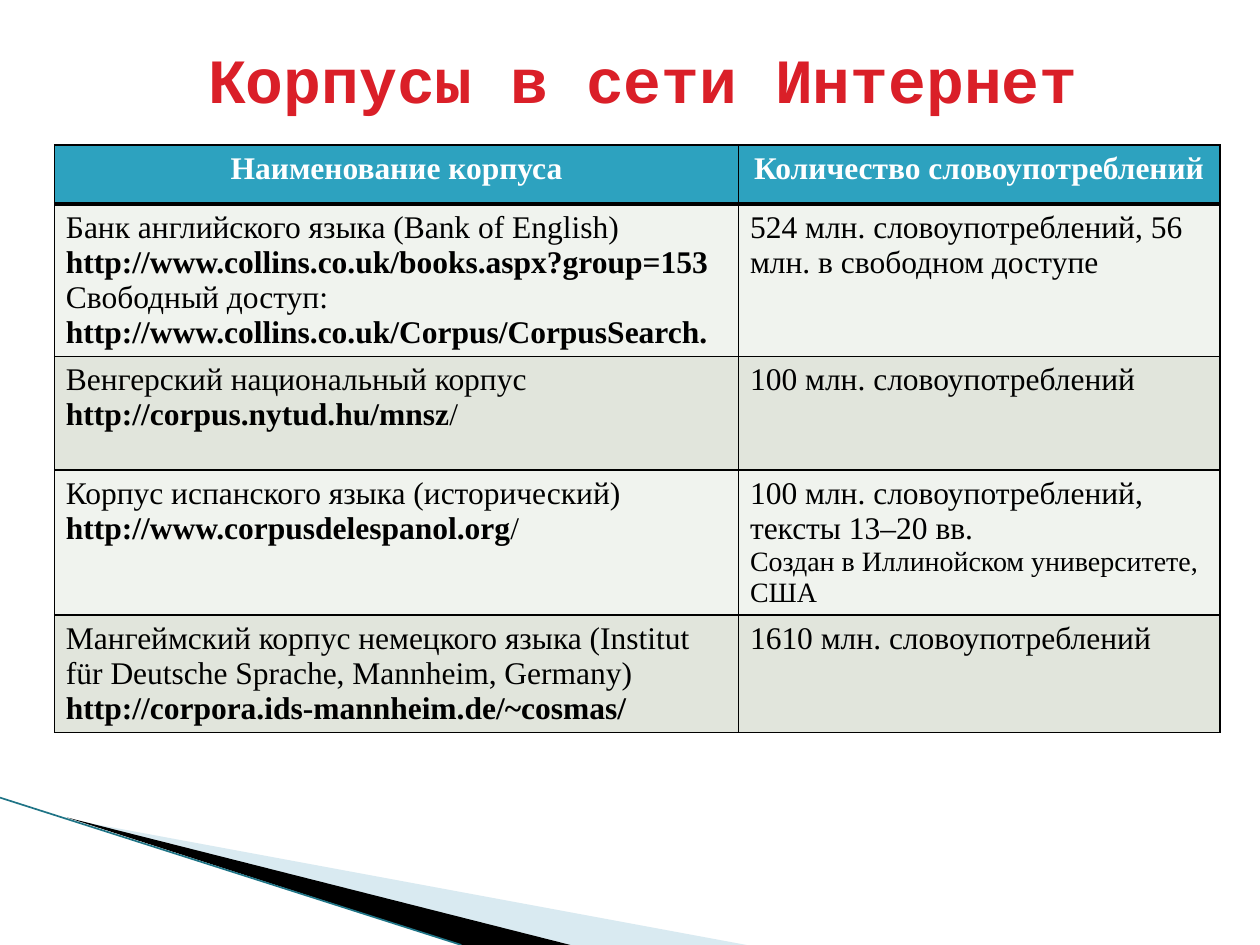
from lxml.etree import SubElement
from pptx import Presentation
from pptx.dml.color import RGBColor
from pptx.enum.text import MSO_ANCHOR, PP_ALIGN
from pptx.oxml import parse_xml
from pptx.oxml.ns import nsdecls, qn
from pptx.util import Cm, Pt

TITLE = "Корпусы в сети Интернет"
HEADERS = ["Наименование корпуса", "Количество словоупотреблений"]
BODY, LINK, NOTE = (18, False), (18, True), (16, False)
BREAK = ("\n", BODY)
CORPORA = [
    (
        [
            [("Банк английского языка (Bank of English) ", BODY),
             ("http://www.collins.co.uk/books.aspx?group=153", LINK)],
            [("Свободный доступ: ", BODY),
             ("http://www.collins.co.uk/Corpus/CorpusSearch.", LINK)],
        ],
        [[("524 млн. словоупотреблений, 56 млн. в свободном доступе", BODY)]],
    ),
    (
        [[("Венгерский национальный корпус", BODY), BREAK,
          ("http://corpus.nytud.hu/mnsz", LINK), ("/", BODY)]],
        [[("100 млн. словоупотреблений", BODY)]],
    ),
    (
        [[("Корпус испанского языка (исторический)", BODY), BREAK,
          ("http://www.corpusdelespanol.org", LINK), ("/", BODY)]],
        [[("100 млн. словоупотреблений, тексты 13–20 вв.", BODY), BREAK,
          ("Создан в Иллинойском университете, США", NOTE)]],
    ),
    (
        [[("Мангеймский корпус немецкого языка "
           "(Institut für Deutsche Sprache, Mannheim, Germany)", BODY), BREAK,
          ("http://corpora.ids-mannheim.de/~cosmas/", LINK)]],
        [[("1610 млн. словоупотреблений", BODY)]],
    ),
]
COLUMN_WIDTHS = [13.79, 9.7]
ROW_HEIGHTS = [1.19, 3.05, 2.29, 2.9, 2.36]
HEADER_FILL, BAND_FILLS = "2DA2BF", ["F0F3EE", "E1E5DC"]
WEDGES = [
    ([(1.4, 16.52), (15.05, 19.05), (11.5, 19.05)], "A0CBDC", 40),
    ([(1.35, 16.48), (11.5, 19.05), (9.3, 19.05)], "000000", 100),
]
EDGE = [(0, 16.08), (9.3, 19.05)]
EDGE_COLOR = "1F7486"
CELL_FORMAT = {"margin_left": Cm(0.23), "margin_right": Cm(0.23),
               "margin_top": Cm(0.13), "margin_bottom": Cm(0.13)}


def color(value):
    """Turn a hex string into a colour."""
    return RGBColor.from_string(value)


def apply_format(target, values):
    """Set every attribute named in a dict."""
    for name, value in values.items():
        setattr(target, name, value)


def add_run(paragraph, text, size, bold, ink="000000", face="Times New Roman"):
    """Append formatted text to a paragraph."""
    run = paragraph.add_run()
    run.text = text
    apply_format(run.font, {"size": Pt(size), "bold": bold, "name": face})
    run.font.color.rgb = color(ink)


def paint(shape, value):
    """Give a shape or cell a solid fill."""
    shape.fill.solid()
    shape.fill.fore_color.rgb = color(value)


def add_wedge(slide, points, value, opacity):
    """Draw a filled triangle of the corner decoration."""
    start, *others = [(Cm(x), Cm(y)) for x, y in points]
    builder = slide.shapes.build_freeform(*start)
    builder.add_line_segments(others)
    shape = builder.convert_to_shape()
    shape.shadow.inherit = False
    paint(shape, value)
    shape.line.fill.background()
    if opacity < 100:
        fill_color = shape.fill._xPr.find(qn("a:solidFill"))[0]
        SubElement(fill_color, qn("a:alpha"), val=str(opacity * 1000))


def add_edge(slide):
    """Draw the thin line along the corner decoration."""
    ends = [Cm(value) for point in EDGE for value in point]
    connector = slide.shapes.add_connector(1, *ends)
    connector.line.width = Pt(0.95)
    connector.line.color.rgb = color(EDGE_COLOR)
    SubElement(connector._element.spPr, qn("a:effectLst"))


def set_borders(cell, top, bottom):
    """Outline a cell in black with the given line widths."""
    properties = cell._tc.get_or_add_tcPr()
    widths = {"lnL": 1, "lnR": 1, "lnT": top, "lnB": bottom}
    for index, (side, width) in enumerate(widths.items()):
        properties.insert(index, parse_xml(
            f'<a:{side} {nsdecls("a")} w="{Pt(width)}"><a:solidFill>'
            f'<a:srgbClr val="000000"/></a:solidFill></a:{side}>'))


def fill_cell(cell, paragraphs, row, ink, alignment):
    """Write, paint and outline one cell."""
    apply_format(cell, CELL_FORMAT)
    for index, runs in enumerate(paragraphs):
        frame = cell.text_frame
        paragraph = frame.add_paragraph() if index else frame.paragraphs[0]
        paragraph.alignment = alignment
        for text, (size, bold) in runs:
            if text == "\n":
                paragraph.add_line_break()
            else:
                add_run(paragraph, text, size, bold, ink)
    paint(cell, BAND_FILLS[(row - 1) % 2] if row else HEADER_FILL)
    set_borders(cell, 3 if row == 1 else 1, 1 if row else 3)


def add_corpus_table(slide):
    """Build the table of corpora."""
    rows = [[[[(header, LINK)]] for header in HEADERS], *CORPORA]
    table = slide.shapes.add_table(
        len(rows), len(HEADERS), Cm(1.1), Cm(2.92),
        Cm(sum(COLUMN_WIDTHS)), Cm(sum(ROW_HEIGHTS))).table
    for column, width in zip(table.columns, COLUMN_WIDTHS):
        column.width = Cm(width)
    for index, (row, height) in enumerate(zip(rows, ROW_HEIGHTS)):
        table.rows[index].height = Cm(height)
        ink, alignment = ("000000", PP_ALIGN.LEFT) if index else ("FFFFFF", PP_ALIGN.CENTER)
        for column, paragraphs in enumerate(row):
            fill_cell(table.cell(index, column), paragraphs, index, ink, alignment)


def add_title(slide):
    """Place the slide heading."""
    box = slide.shapes.add_textbox(Cm(1.3), Cm(0.53), Cm(23.32), Cm(2.08))
    apply_format(box.text_frame, {"word_wrap": True, "vertical_anchor": MSO_ANCHOR.MIDDLE})
    paragraph = box.text_frame.paragraphs[0]
    paragraph.alignment = PP_ALIGN.CENTER
    add_run(paragraph, TITLE, 36, True, "DA1F28", "Courier New")


def main():
    """Build and save the slide."""
    presentation = Presentation()
    apply_format(presentation, {"slide_width": Cm(25.4), "slide_height": Cm(19.05)})
    slide = presentation.slides.add_slide(presentation.slide_layouts[6])
    for wedge in WEDGES:
        add_wedge(slide, *wedge)
    add_edge(slide)
    add_corpus_table(slide)
    add_title(slide)
    presentation.save("out.pptx")


if __name__ == "__main__":
    main()
